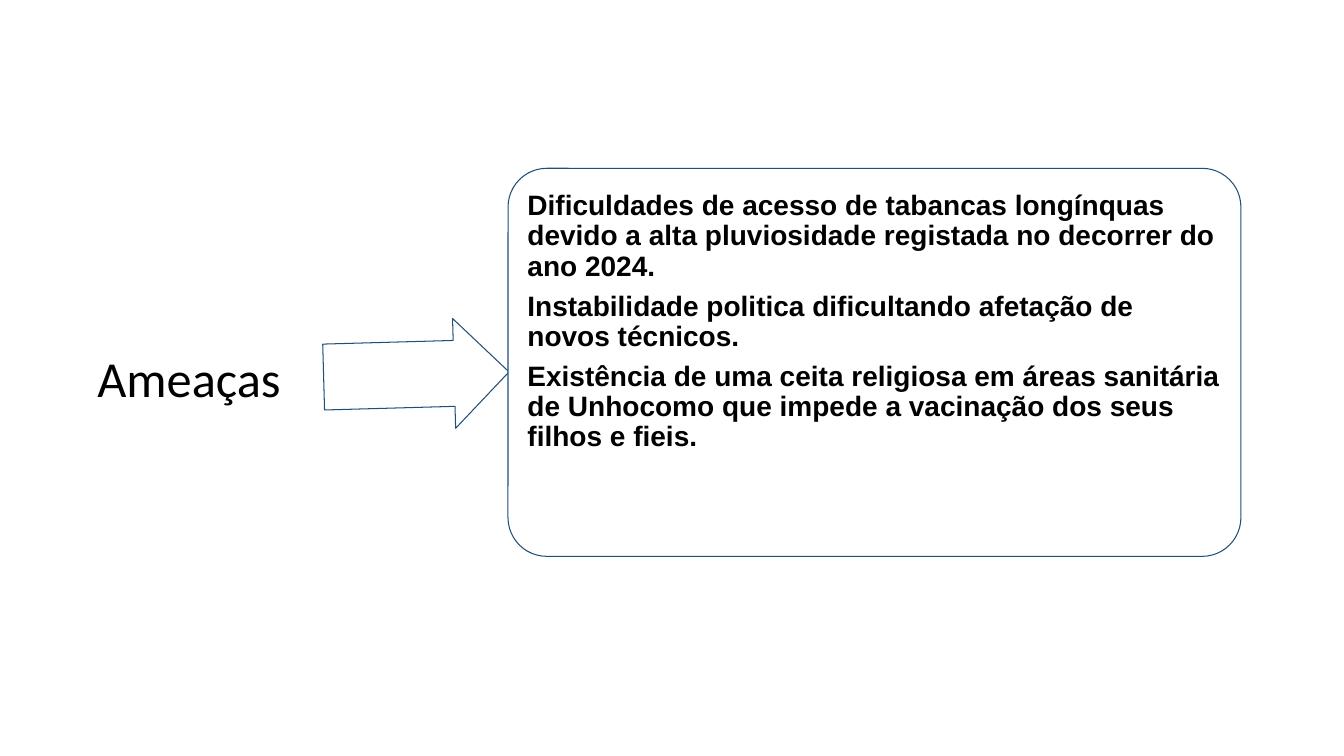
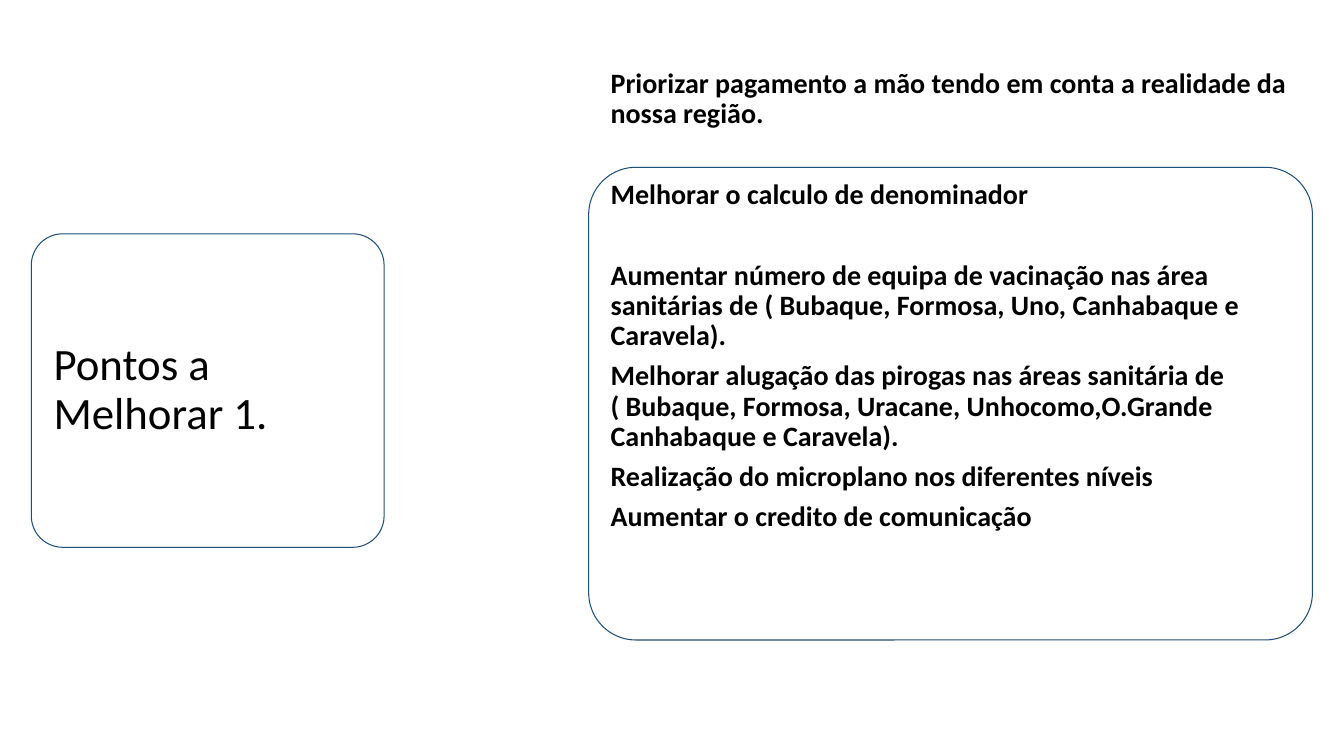
from pptx import Presentation
from pptx.dml.color import RGBColor
from pptx.enum.shapes import MSO_SHAPE as Preset
from pptx.enum.text import MSO_ANCHOR as Anchor, MSO_AUTO_SIZE as AutoSize, PP_ALIGN as Align
from pptx.util import Inches, Pt


def color(hex_text):
    return RGBColor.from_string(hex_text)


class Deck:
    INK, OUTLINE, PAPER = "000000", "1F4E79", "FFFFFF"
    LINE_SPACING, PARA_GAP, WIDE_GAP = 0.9, 7, 36
    CORNER, CARD_PAD = 0.1, 0.0293
    TITLE_FONT = "Calibri"

    def __init__(self):
        self.deck = Presentation()
        self.deck.slide_width = Inches(13.33)
        self.deck.slide_height = Inches(7.5)
        self.page = None

    def add_page(self):
        self.page = self.deck.slides.add_slide(self.deck.slide_layouts[5])

    def area(self, left, top, width, height):
        across, down = self.deck.slide_width / 100, self.deck.slide_height / 100
        return [int(left * across), int(top * down), int(width * across), int(height * down)]

    def outlined(self, preset, area, adjustments):
        shape = self.page.shapes.add_shape(preset, *area)
        for index, value in enumerate(adjustments):
            shape.adjustments[index] = value
        shape.shadow.inherit = False
        shape.fill.solid()
        shape.fill.fore_color.rgb = color(self.PAPER)
        shape.line.color.rgb = color(self.OUTLINE)
        shape.line.width = Pt(0.75)
        return shape

    def arrow(self, *shares, rotation):
        shape = self.outlined(Preset.RIGHT_ARROW, self.area(*shares), [0.6, 0.5])
        shape.rotation = rotation

    def card(self, *shares):
        left, top, width, height = self.area(*shares)
        self.outlined(Preset.ROUNDED_RECTANGLE, (left, top, width, height), [self.CORNER])
        pad = int(height * self.CARD_PAD)
        return [left + pad, top + pad, width - 2 * pad, height - 2 * pad]

    def frame(self, box, anchor, side, end):
        frame = box.text_frame
        frame.word_wrap = True
        frame.auto_size = AutoSize.NONE
        frame.vertical_anchor = anchor
        frame.margin_left = frame.margin_right = Inches(side)
        frame.margin_top = frame.margin_bottom = Inches(end)
        return frame

    def style(self, para, font, size, bold, align, gap):
        para.alignment = align
        para.line_spacing = self.LINE_SPACING
        para.space_after = Pt(gap)
        para.font.name = font
        para.font.size = Pt(size)
        para.font.bold = bold
        para.font.color.rgb = color(self.INK)

    def title(self, text, area, size, inset, align=Align.LEFT):
        title = self.page.shapes.title
        title.left, title.top, title.width, title.height = area
        title.element.getparent().append(title.element)
        frame = self.frame(title, Anchor.MIDDLE, inset, inset)
        frame.text = text
        self.style(frame.paragraphs[0], self.TITLE_FONT, size, False, align, 0)

    def points(self, texts, area, top, font, wide_after=()):
        left, card_top, width, height = area
        start = int(self.deck.slide_height * top / 100)
        box = self.page.shapes.add_textbox(left, start, width, card_top + height - start)
        frame = self.frame(box, Anchor.TOP, 0.08, 0)
        for index, text in enumerate(texts):
            para = frame.add_paragraph() if index else frame.paragraphs[0]
            para.text = text
            gap = self.WIDE_GAP if index in wide_after else self.PARA_GAP
            self.style(para, font, 20, True, Align.LEFT, gap)


def threats(show):
    show.add_page()
    show.title("Ameaças", show.area(4.5, 38.8, 19.13, 23.2), 36, 0.15, Align.CENTER)
    show.arrow(24.08, 42.27, 13.8, 14.53, rotation=358.4)
    inside = show.card(37.8, 22.27, 54.53, 51.33)
    show.points([
        "Dificuldades de acesso de tabancas longínquas devido a alta pluviosidade "
        "registada no decorrer do ano 2024.",
        "Instabilidade politica dificultando afetação de novos técnicos.",
        "Existência de uma ceita religiosa em áreas sanitária de Unhocomo que impede "
        "a vacinação dos seus filhos e fieis.",
    ], inside, 25.33, "Arial")


def improvements(show):
    show.add_page()
    show.title("Pontos a Melhorar 1.", show.card(2.33, 30.93, 26.25, 41.47), 32, 0.13)
    inside = show.card(43.8, 22.13, 53.85, 62.53)
    show.points([
        "Priorizar pagamento a mão tendo em conta a realidade da nossa região.",
        "Melhorar o calculo de denominador",
        "Aumentar número de equipa de vacinação nas área sanitárias de "
        "( Bubaque, Formosa, Uno, Canhabaque e Caravela).",
        "Melhorar alugação das pirogas nas áreas sanitária de "
        "( Bubaque, Formosa, Uracane, Unhocomo,O.Grande Canhabaque e Caravela).",
        "Realização do microplano nos diferentes níveis",
        "Aumentar o credito de comunicação",
    ], inside, 9.2, "Calibri", wide_after=(0, 1))


def main():
    show = Deck()
    threats(show)
    improvements(show)
    show.deck.save("out.pptx")


if __name__ == "__main__":
    main()
